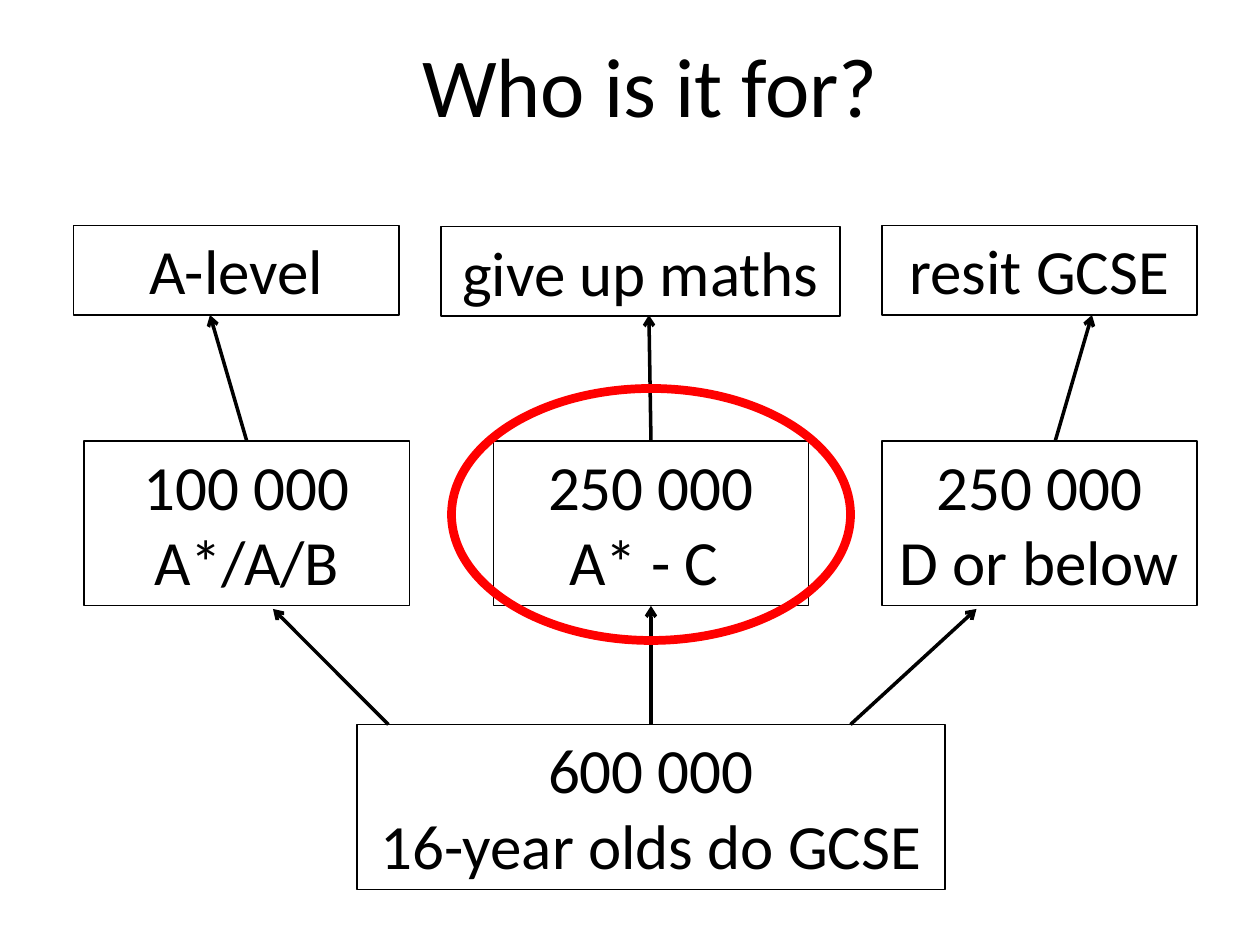
"""Build the slide showing the routes that 16-year-olds take after GCSE maths."""
from lxml.etree import SubElement
from pptx import Presentation
from pptx.dml.color import RGBColor
from pptx.enum.shapes import MSO_CONNECTOR as Connector, MSO_SHAPE as Shape
from pptx.enum.text import MSO_ANCHOR as Anchor, PP_ALIGN as Align
from pptx.oxml.ns import qn
from pptx.util import Inches, Pt

COLUMNS, ROWS = 120, 90
OUTCOME_TOP, OUTCOME_HEIGHT = 21.5, 8.5
GRADE_TOP, GROUP_HEIGHT = 42, 15.7
COHORT_TOP = 69

deck = Presentation()
deck.slide_width, deck.slide_height = Inches(10), Inches(7.5)
cell = deck.slide_width / COLUMNS
page = deck.slides.add_slide(deck.slide_layouts[5])


def grid(*cells):
    return [round(count * cell) for count in cells]


def write(box, text, size=36, color="000000", align=Align.CENTER):
    frame = box.text_frame
    frame.word_wrap = True
    frame.vertical_anchor = Anchor.TOP
    frame.text = text
    for para in frame.paragraphs:
        para.alignment = align
        for span in para.runs:
            span.font.name = "Calibri"
            span.font.size = Pt(size)
            span.font.color.rgb = RGBColor.from_string(color)


title = page.shapes.title
title.left, title.top, title.width, title.height = grid(39, 2.6, 46, 11)
write(title, "Who is it for?", size=48, align=Align.LEFT)

boxes = [
    (34, COHORT_TOP, 56, GROUP_HEIGHT, "600 000\n16-year olds do GCSE"),
    (8, GRADE_TOP, 31, GROUP_HEIGHT, "100 000\nA*/A/B"),
    (47, GRADE_TOP, 30, GROUP_HEIGHT, "250 000\nA* - C "),
    (84, GRADE_TOP, 30, GROUP_HEIGHT, "250 000\nD or below"),
    (7, OUTCOME_TOP, 31, OUTCOME_HEIGHT, "A-level"),
    (42, OUTCOME_TOP + 0.1, 38, OUTCOME_HEIGHT, "give up maths"),
    (84, OUTCOME_TOP, 30, OUTCOME_HEIGHT, "resit GCSE"),
]
for *place, text in boxes:
    box = page.shapes.add_shape(Shape.RECTANGLE, *grid(*place))
    box.shadow.inherit = False
    box.fill.background()
    box.line.color.rgb = RGBColor.from_string("000000")
    box.line.width = Pt(0.75)
    write(box, text)

outcome_bottom = OUTCOME_TOP + OUTCOME_HEIGHT
arrows = [
    (37, COHORT_TOP, 26, 58),
    (62, COHORT_TOP, 62, GRADE_TOP + GROUP_HEIGHT),
    (81, COHORT_TOP, 93, 58),
    (23.5, GRADE_TOP, 20, outcome_bottom),
    (62, GRADE_TOP, 61.8, outcome_bottom),
    (100.5, GRADE_TOP, 104, outcome_bottom),
]
for ends in arrows:
    arrow = page.shapes.add_connector(Connector.STRAIGHT, *grid(*ends))
    arrow.line.color.rgb = RGBColor.from_string("000000")
    arrow.line.width = Pt(2)
    SubElement(arrow.line._get_or_add_ln(), qn("a:tailEnd"), type="arrow")
    SubElement(arrow._element.spPr, qn("a:effectLst"))

highlight = page.shapes.add_shape(Shape.OVAL, *grid(43, 37, 38, 24))
highlight.shadow.inherit = False
highlight.fill.background()
highlight.line.color.rgb = RGBColor.from_string("FF0000")
highlight.line.width = Pt(5)

deck.save("out.pptx")
